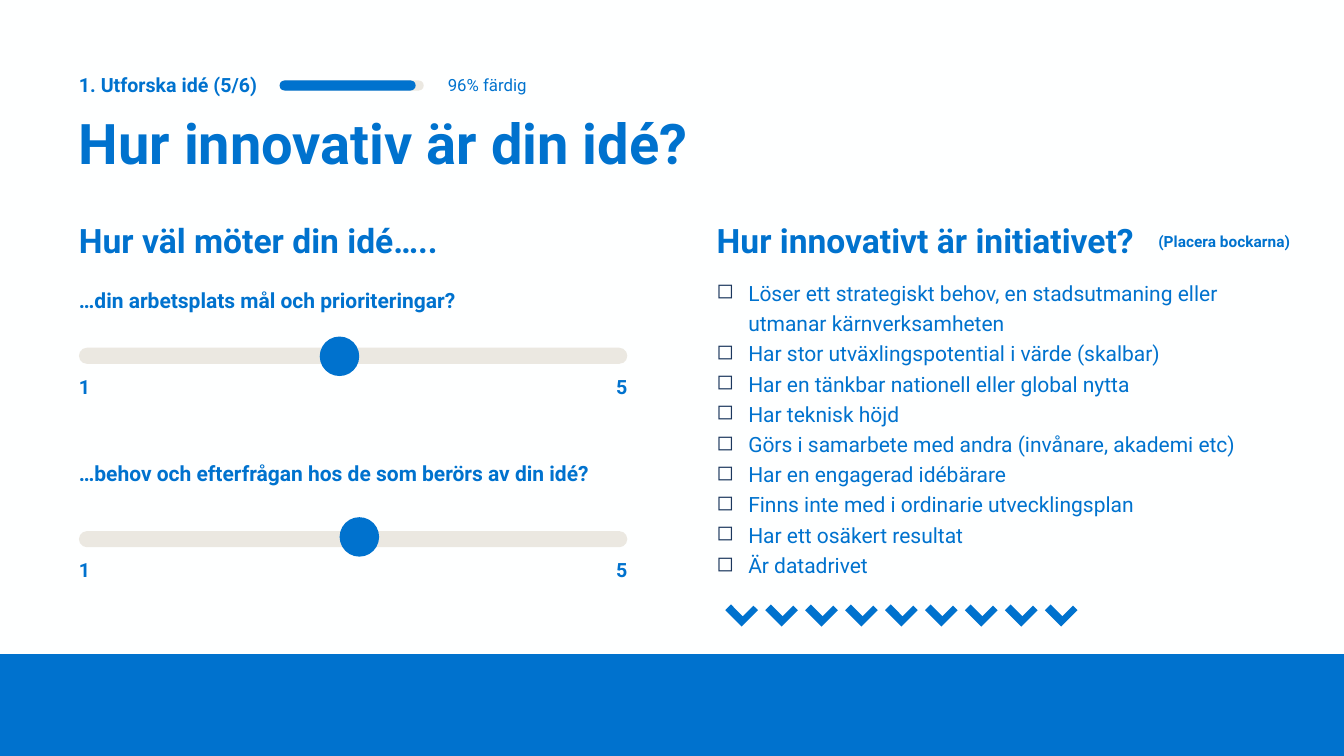
from lxml import etree
from pptx import Presentation
from pptx import util as u
from pptx.dml.color import RGBColor
from pptx.enum import shapes, text
from pptx.oxml.ns import qn

BLUE, SAND, NAVY, WHITE = "0072CE", "EBE8E1", "1B365D", "FEFFFF"
ITEMS = [
    "Löser ett strategiskt behov, en stadsutmaning eller utmanar kärnverksamheten",
    "Har stor utväxlingspotential i värde (skalbar)",
    "Har en tänkbar nationell eller global nytta",
    "Har teknisk höjd",
    "Görs i samarbete med andra (invånare, akademi etc)",
    "Har en engagerad idébärare",
    "Finns inte med i ordinarie utvecklingsplan",
    "Har ett osäkert resultat",
    "Är datadrivet",
]


def set_color(target, color):
    target.rgb = RGBColor.from_string(color)


def add_shape(s, kind, x, y, w, h, color=BLUE, adj=()):
    sp = s.shapes.add_shape(kind, u.Pt(x), u.Pt(y), u.Pt(w), u.Pt(h))
    sp.shadow.inherit = False
    sp.fill.solid()
    set_color(sp.fill.fore_color, color)
    sp.line.fill.background()
    for i, value in enumerate(adj):
        sp.adjustments[i] = value
    return sp


def add_bar(s, x, y, w, h, color):
    add_shape(s, shapes.MSO_SHAPE.ROUNDED_RECTANGLE, x, y, w, h, color, [0.5])


def add_checkbox(p, indent):
    pPr = p._p.get_or_add_pPr()
    pPr.set("marL", str(u.Pt(indent)))
    pPr.set("indent", str(-u.Pt(indent)))
    buClr = etree.SubElement(pPr, qn("a:buClr"))
    etree.SubElement(buClr, qn("a:srgbClr"), val=NAVY)
    etree.SubElement(pPr, qn("a:buChar"), char="◻")


def add_text(s, x, y, w, h, lines, size, bold=True, spacing=1.0,
             align=text.PP_ALIGN.LEFT, checkbox=False):
    tf = s.shapes.add_textbox(u.Pt(x), u.Pt(y), u.Pt(w), u.Pt(h)).text_frame
    tf.word_wrap = True
    tf.margin_left = tf.margin_right = tf.margin_top = tf.margin_bottom = 0
    for i, line in enumerate(lines):
        p = tf.add_paragraph() if i else tf.paragraphs[0]
        if checkbox:
            add_checkbox(p, 22.5)
        p.alignment = align
        p.line_spacing = spacing
        r = p.add_run()
        r.text = line
        r.font.name = "Roboto"
        r.font.size = u.Pt(size)
        r.font.bold = bold
        set_color(r.font.color, BLUE)


def header(s, x, y, w):
    add_text(s, x, y + 2, 135, 14, ["1. Utforska idé (5/6)"], 14, spacing=0.8)
    add_bar(s, x + 143.3, y + 4.2, 103, 7.2, SAND)
    add_bar(s, x + 143.3, y + 4.2, 97.2, 7.2, BLUE)
    add_text(s, x + 263.5, y, 228, 14.5, ["96% färdig"], 12, bold=False)
    add_text(s, x, y + 33.8, w, 39, ["Hur innovativ är din idé?"], 40, spacing=0.8)


def slider(s, x, y, w, question, question_gap, knob_x, knob_rise):
    add_text(s, x, y - question_gap, w + 26, 18, [question], 15)
    add_bar(s, x, y, w, 11.5, SAND)
    add_text(s, x, y + 19.4, 87, 17.3, ["1"], 14)
    add_text(s, x + w - 87, y + 19.4, 87, 17.3, ["5"], 14, align=text.PP_ALIGN.RIGHT)
    add_shape(s, shapes.MSO_SHAPE.OVAL, x + knob_x, y - knob_rise, 28.2, 28.2)


def fit_column(s, x, y, w):
    add_text(s, x, y, w, 29, ["Hur väl möter din idé….."], 24)
    slider(s, x, y + 91.4, w, "…din arbetsplats mål och prioriteringar?", 43.2, 172, 8)
    slider(s, x, y + 222.4, w, "…behov och efterfrågan hos de som berörs av din idé?",
           50.4, 186.2, 10)


def innovation_column(s, x, y, w):
    add_text(s, x, y, w, 29, ["Hur innovativt är initiativet?"], 24)
    add_text(s, x + 315.4, y + 8.6, 132, 14, ["(Placera bockarna)"], 11)
    add_text(s, x, y + 39.6, w, 216.7, ITEMS, 15, bold=False, spacing=1.2, checkbox=True)
    for i in range(len(ITEMS)):
        sp = add_shape(s, shapes.MSO_SHAPE.CORNER, x + 9.5 + 28.53 * i, y + 270.6,
                       16.5, 16.5, adj=[0.28, 0.35])
        sp.rotation = 315


def main():
    prs = Presentation()
    prs.slide_width, prs.slide_height = u.Pt(960), u.Pt(540)
    s = prs.slides.add_slide(prs.slide_layouts[6])
    s.background.fill.solid()
    set_color(s.background.fill.fore_color, WHITE)
    add_shape(s, shapes.MSO_SHAPE.RECTANGLE, 0, 467.2, 960, 72.8)
    header(s, 56.4, 53.3, 620)
    fit_column(s, 56.4, 157, 391.7)
    innovation_column(s, 512, 157, 404)
    prs.save("out.pptx")


if __name__ == "__main__":
    main()
